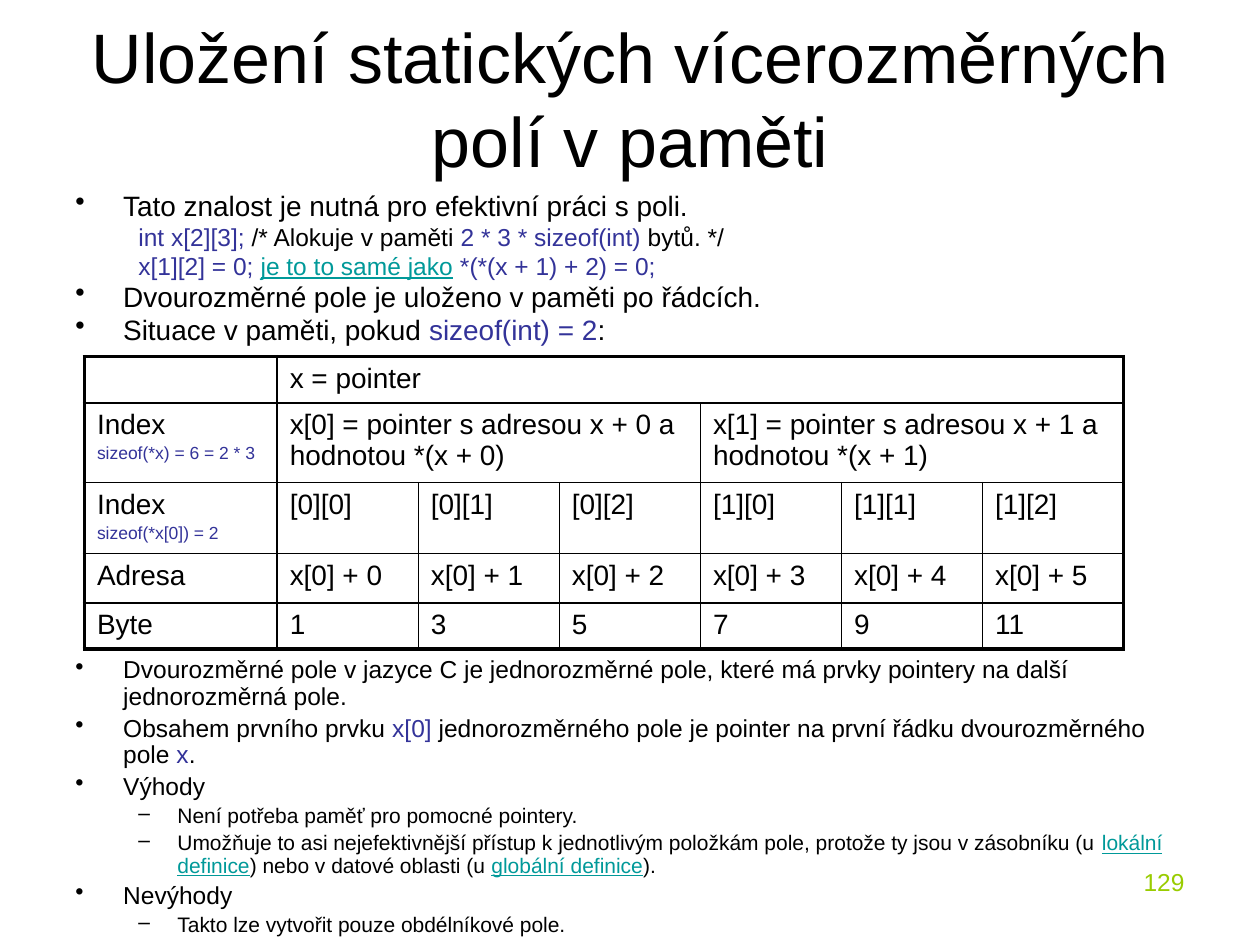
from lxml.etree import SubElement
from pptx import Presentation
from pptx.dml.color import RGBColor
from pptx.enum.text import MSO_ANCHOR, PP_ALIGN
from pptx.oxml.ns import qn
from pptx.util import Inches, Pt

BLACK, CODE, LINK, GREEN = "000000", "333399", "009999", "99CC00"
OUTER_LINE, INNER_LINE = Pt(2.25), Pt(1)
SPACE_SHARE = 0.22  # space before a paragraph, as a share of its text size


def add_box(left, top, width, height):
    box = page.shapes.add_textbox(Inches(left), Inches(top), Inches(width), Inches(height))
    box.text_frame.word_wrap = True
    return box.text_frame


def write_para(frame, spans, size, color=BLACK, bullet=None, indent=None, line_spacing=None):
    """Fill the next paragraph; a span is plain text or a (text, colour) pair."""
    first = len(frame.paragraphs) == 1 and not frame.paragraphs[0].runs
    para = frame.paragraphs[0] if first else frame.add_paragraph()
    properties = para._p.get_or_add_pPr()
    if indent:
        margin, hanging = indent
        properties.set("marL", str(Inches(margin)))
        properties.set("indent", str(-Inches(hanging)))
    if bullet:
        SubElement(properties, qn("a:buChar"), char=bullet)
    para.line_spacing = line_spacing
    para.space_before = Pt(round(size * SPACE_SHARE, 1))
    para.font.name, para.font.size = "Arial", Pt(size)
    para.font.color.rgb = RGBColor.from_string(color)
    for item in spans:
        text, span_color = (item, color) if isinstance(item, str) else item
        span = para.add_run()
        span.text = text
        if span_color != color:
            span.font.color.rgb = RGBColor.from_string(span_color)
        if span_color == LINK:
            span.font.underline = True
    return para


deck = Presentation()
deck.slide_width, deck.slide_height = Inches(10), Inches(7.5)
page = deck.slides.add_slide(deck.slide_layouts[6])

# Page number and title
number = write_para(add_box(7.17, 6.83, 2.33, 0.52), ["129"], 14, GREEN)
number.alignment = PP_ALIGN.RIGHT

title_frame = add_box(0.5, 0, 9, 1.55)
title_frame.vertical_anchor = MSO_ANCHOR.MIDDLE
title = write_para(title_frame, ["Uložení statických vícerozměrných polí v paměti"], 40)
title.alignment = PP_ALIGN.CENTER

# Bulleted text above and below the table: (bullet, size, spans)
intro = [
    ("•", 16, ["Tato znalost je nutná pro efektivní práci s poli."]),
    (None, 14, [("int x[2][3];", CODE), " /* Alokuje v paměti ",
                ("2 * 3 * sizeof(int)", CODE), " bytů. */"]),
    (None, 14, [("x[1][2] = 0; ", CODE), ("je to to samé jako", LINK), " ",
                ("*(*(x + 1) + 2) = 0;", CODE)]),
    ("•", 16, ["Dvourozměrné pole je uloženo v paměti po řádcích."]),
    ("•", 16, ["Situace v paměti, pokud ", ("sizeof(int) = 2", CODE), ":"]),
]
summary = [
    ("•", 14, ["Dvourozměrné pole v jazyce C je jednorozměrné pole, které má prvky "
               "pointery na další jednorozměrná pole."]),
    ("•", 14, ["Obsahem prvního prvku ", ("x[0]", CODE),
               " jednorozměrného pole je pointer na první řádku dvourozměrného pole ",
               ("x", CODE), "."]),
    ("•", 14, ["Výhody"]),
    ("–", 12, ["Není potřeba paměť pro pomocné pointery."]),
    ("–", 12, ["Umožňuje to asi nejefektivnější přístup k jednotlivým položkám pole, "
               "protože ty jsou v zásobníku (u ", ("lokální definice", LINK),
               ") nebo v datové oblasti (u ", ("globální definice", LINK), ")."]),
    ("•", 14, ["Nevýhody"]),
    ("–", 12, ["Takto lze vytvořit pouze obdélníkové pole."]),
]
for top, height, line_spacing, paragraphs in [(1.5, 1.42, 0.8, intro),
                                              (5.17, 2.33, 0.9, summary)]:
    frame = add_box(0.5, top, 9, height)
    for bullet, size, spans in paragraphs:
        indent = (0.38, 0.38) if bullet == "•" else (0.81, 0.31)
        write_para(frame, spans, size, bullet=bullet, indent=indent, line_spacing=line_spacing)

# Memory table: one label column and six element columns
row_heights = [0.3, 0.46, 0.46, 0.39, 0.3]
column_widths = [1.53] + [1.12] * 6
last_row, last_column = len(row_heights) - 1, len(column_widths) - 1
table = page.shapes.add_table(
    len(row_heights), len(column_widths), Inches(0.67), Inches(2.83),
    Inches(sum(column_widths)), Inches(sum(row_heights))).table
for row, height in zip(table.rows, row_heights):
    row.height = Inches(height)
for column, width in zip(table.columns, column_widths):
    column.width = Inches(width)
for row, start, end in [(0, 1, 6), (1, 1, 3), (1, 4, 6)]:
    table.cell(row, start).merge(table.cell(row, end))

contents = {
    (0, 0): "", (0, 1): "x = pointer",
    (1, 0): "Index", (2, 0): "Index", (3, 0): "Adresa", (4, 0): "Byte",
}
for i in range(2):
    contents[1, 1 + 3 * i] = f"x[{i}] = pointer s adresou x + {i} a hodnotou *(x + {i})"
for i in range(6):
    contents[2, i + 1] = f"[{i // 3}][{i % 3}]"
    contents[3, i + 1] = f"x[0] + {i}"
    contents[4, i + 1] = str(2 * i + 1)
size_notes = {(1, 0): "sizeof(*x) = 6 = 2 * 3", (2, 0): "sizeof(*x[0]) = 2"}

for (row, column), text in contents.items():
    cell = table.cell(row, column)
    write_para(cell.text_frame, [text] if text else [], 16)
    if (row, column) in size_notes:
        write_para(cell.text_frame, [size_notes[row, column]], 10, CODE)
    span_width = cell.span_width if cell.is_merge_origin else 1
    on_outside = {
        "a:lnL": column == 0,
        "a:lnR": column + span_width - 1 == last_column,
        "a:lnT": row == 0,
        "a:lnB": row == last_row,
    }
    cell_properties = cell._tc.get_or_add_tcPr()
    for edge, outside in on_outside.items():
        line = SubElement(cell_properties, qn(edge), w=str(OUTER_LINE if outside else INNER_LINE))
        SubElement(SubElement(line, qn("a:solidFill")), qn("a:srgbClr"), val=BLACK)
    cell.fill.background()

deck.save("out.pptx")
